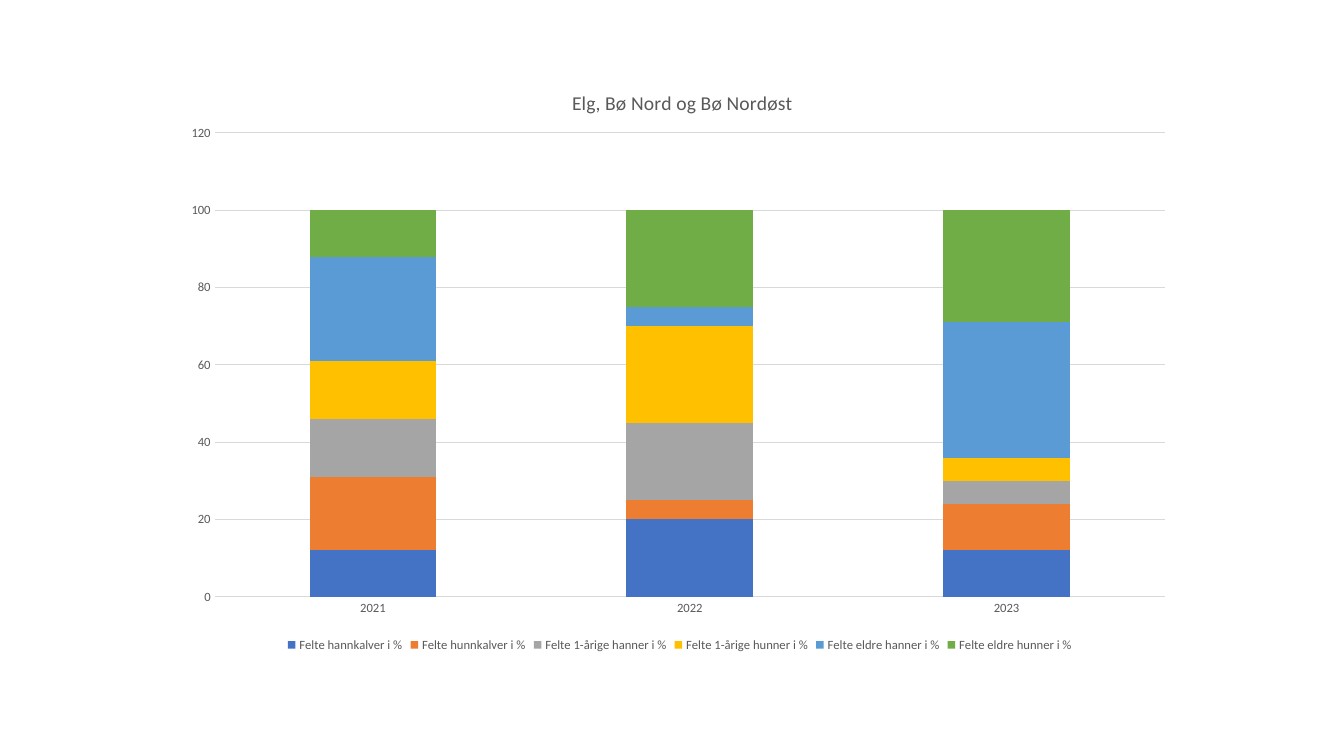
from lxml import etree
from pptx import Presentation
from pptx.chart import data as cd
from pptx.dml.color import RGBColor
from pptx.enum import chart as ce
from pptx.oxml import ns
from pptx.util import Cm, Pt

TITLE = "Elg, Bø Nord og Bø Nordøst"
YEARS = ["2021", "2022", "2023"]
GREY = RGBColor(0x59, 0x59, 0x59)
PALE = RGBColor(0xD9, 0xD9, 0xD9)
BLACK = RGBColor(0, 0, 0)
BLUE = RGBColor(0x44, 0x72, 0xC4)
ORANGE = RGBColor(0xED, 0x7D, 0x31)
SILVER = RGBColor(0xA5, 0xA5, 0xA5)
GOLD = RGBColor(0xFF, 0xC0, 0x00)
SKY = RGBColor(0x5B, 0x9B, 0xD5)
GREEN = RGBColor(0x70, 0xAD, 0x47)
SERIES = [
    ("Felte hannkalver i %", (12, 20, 12), BLUE),
    ("Felte hunnkalver i %", (19, 5, 12), ORANGE),
    ("Felte 1-årige hanner i %", (15, 20, 6), SILVER),
    ("Felte 1-årige hunner i %", (15, 25, 6), GOLD),
    ("Felte eldre hanner i %", (27, 5, 35), SKY),
    ("Felte eldre hunner i %", (12, 25, 29), GREEN),
]
BOX = (4.39, 1.55, 25.48, 14.99)
PLOT = {"layoutTarget": "inner", "xMode": "edge", "yMode": "edge",
        "x": 0.04, "y": 0.12, "w": 0.94, "h": 0.78}
HEAD = {"xMode": "edge", "yMode": "edge", "x": 0.39, "y": 0.04}


def style(font, size, color):
    font.name = "Calibri"
    font.size = Pt(size)
    font.bold = False
    font.color.rgb = color


def place(node, index, rules):
    for old in node.findall(ns.qn("c:layout")):
        node.remove(old)
    outer = etree.Element(ns.qn("c:layout"))
    inner = etree.SubElement(outer, ns.qn("c:manualLayout"))
    for key, value in rules.items():
        etree.SubElement(inner, ns.qn("c:" + key)).set("val", str(value))
    node.insert(index, outer)


def main():
    prs = Presentation()
    prs.slide_width, prs.slide_height = Cm(33.87), Cm(19.05)
    slide = prs.slides.add_slide(prs.slide_layouts[6])

    data = cd.CategoryChartData()
    data.categories = YEARS
    for name, values, color in SERIES:
        data.add_series(name, values)
    chart = slide.shapes.add_chart(
        ce.XL_CHART_TYPE.COLUMN_STACKED, *map(Cm, BOX), data).chart
    style(chart.font, 10, BLACK)

    title = chart.chart_title
    run = title.text_frame.paragraphs[0].add_run()
    run.text = TITLE
    style(run.font, 14, GREY)
    title.include_in_layout = False

    plot = chart.plots[0]
    plot.gap_width, plot.overlap = 150, 100
    plot.vary_by_categories = False
    for series, (name, values, color) in zip(plot.series, SERIES):
        series.format.fill.solid()
        series.format.fill.fore_color.rgb = color

    years, scale = chart.category_axis, chart.value_axis
    for axis in (years, scale):
        axis.major_tick_mark = axis.minor_tick_mark = ce.XL_TICK_MARK.NONE
        style(axis.tick_labels.font, 9, GREY)
    scale.minimum_scale, scale.maximum_scale, scale.major_unit = 0, 120, 20
    scale.format.line.fill.background()
    for line in (years.format.line, scale.major_gridlines.format.line):
        line.color.rgb = PALE
        line.width = Pt(0.75)

    chart.has_legend = True
    chart.legend.position = ce.XL_LEGEND_POSITION.BOTTOM
    chart.legend.include_in_layout = False
    style(chart.legend.font, 9, GREY)

    root = chart.element
    place(root.find(".//" + ns.qn("c:plotArea")), 0, PLOT)
    place(root.find(".//" + ns.qn("c:title")), 1, HEAD)
    prs.save("out.pptx")


if __name__ == "__main__":
    main()
